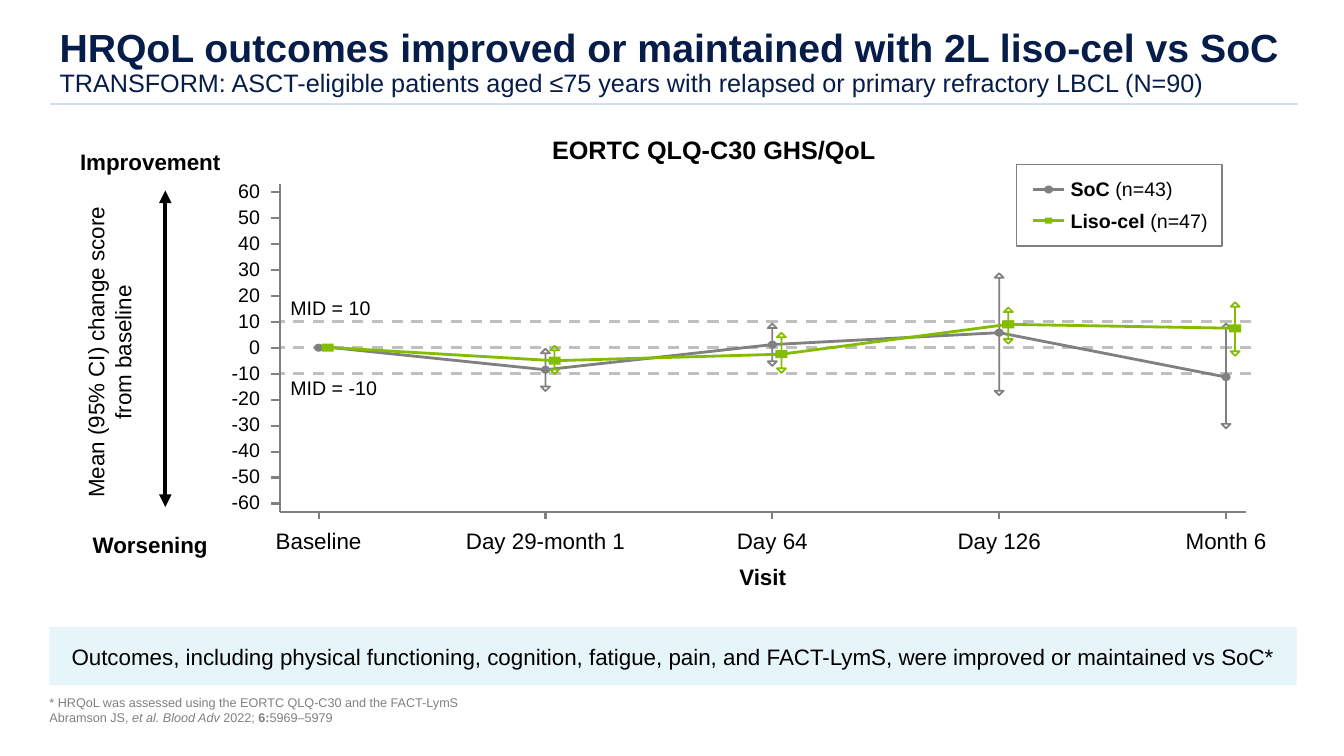
from lxml.etree import SubElement
from pptx import Presentation
from pptx.dml.color import RGBColor
from pptx.enum.dml import MSO_LINE
from pptx.enum.shapes import MSO_CONNECTOR, MSO_SHAPE as Kind
from pptx.enum.text import MSO_ANCHOR as Anchor, MSO_AUTO_SIZE as Fit, PP_ALIGN as Align
from pptx.oxml.ns import qn
from pptx.util import Inches, Pt

NAVY, BLACK, WHITE = "071D49", "000000", "FFFFFF"
GRAY, GREEN, PALE = "808080", "84BD00", "BFBFBF"
LEFT, WIDE = 0.49, 12.37

AXIS_X, AXIS_Y, ZERO, UNIT = 2.78, 5.08, 3.45, 0.2575 / 10
DAY_X, DAY_GAP, TRACE_X = 3.16, 2.25, 3.3
DAYS = ["Baseline", "Day 29-month 1", "Day 64", "Day 126", "Month 6"]

# Mean, upper and lower limit at each visit
SOC = [(0, 0, 0), (-8.5, -0.4, -16.7), (1.2, 9.3, -7), (5.8, 28.7, -18.3), (-11.3, 9.3, -31.1)]
LISO = [(0, 0, 0), (-5, 0.8, -10.1), (-2.5, 5.8, -9.7), (9, 15.5, 1.6), (7.5, 17.5, -3.1)]


def paint(form, color):
    """Set a font colour, or a solid fill from a hex string."""
    if hasattr(form, "solid"):
        form.solid()
        form.fore_color.rgb = RGBColor.from_string(color)
    else:
        form.color.rgb = RGBColor.from_string(color)


def score_y(score):
    return ZERO - score * UNIT


def day_x(index):
    return DAY_X + index * DAY_GAP


class Page:
    """Holds the slide and its text style."""

    def __init__(self, slide, face="Arial"):
        self.slide, self.face = slide, face
        self.shapes = slide.shapes

    def style(self, font, size, color, bold=False):
        font.name, font.size, font.bold = self.face, Pt(size), bold
        paint(font, color)

    def title(self, head, sub):
        box = self.shapes.title
        box.left, box.top = Inches(LEFT), Inches(0.32)
        box.width, box.height = Inches(WIDE), Inches(0.7)
        frame = box.text_frame
        frame.auto_size, frame.vertical_anchor = Fit.NONE, Anchor.BOTTOM
        para = frame.paragraphs[0]
        para.alignment, para.line_spacing = Align.LEFT, 0.9
        self.style(para.font, 28, NAVY, True)
        para.add_run().text = head
        para.add_line_break()
        run = para.add_run()
        run.text = sub
        run.font.size, run.font.bold = Pt(18), False

    def put_text(self, shape, paras, size, color=BLACK, bold=False, align=Align.LEFT,
                 anchor=Anchor.MIDDLE, inset=(0, 0), after=0, wrap=True):
        """Fill a shape; a paragraph is a string or a list of (text, marks)."""
        frame = shape.text_frame
        frame.word_wrap, frame.vertical_anchor = wrap, anchor
        frame.margin_left = frame.margin_right = Inches(inset[0])
        frame.margin_top = frame.margin_bottom = Inches(inset[1])
        for i, parts in enumerate(paras):
            para = frame.add_paragraph() if i else frame.paragraphs[0]
            para.alignment, para.space_after = align, Pt(after)
            self.style(para.font, size, color, bold)
            if isinstance(parts, str):
                parts = [(parts, "")]
            for text, marks in parts:
                run = para.add_run()
                run.text = text
                if "b" in marks:
                    run.font.bold = True
                if "i" in marks:
                    run.font.italic = True

    def label(self, x, y, w, h, *paras, size=16, turn=0, **look):
        box = self.shapes.add_textbox(Inches(x), Inches(y), Inches(w), Inches(h))
        box.rotation = turn
        self.put_text(box, paras, size, **look)

    def shape(self, kind, x, y, w, h, fill=None, line=None, width=1):
        form = self.shapes.add_shape(kind, Inches(x), Inches(y), Inches(w), Inches(h))
        form.shadow.inherit = False
        self.finish(form, fill, line, width)
        return form

    def finish(self, form, fill, line, width):
        if fill:
            paint(form.fill, fill)
        else:
            form.fill.background()
        if line:
            paint(form.line.fill, line)
            form.line.width = Pt(width)
        else:
            form.line.fill.background()

    def dot(self, kind, x, y, w, h, fill):
        """Place a marker by its centre."""
        self.shape(kind, x - w / 2, y - h / 2, w, h, fill)

    def line(self, x1, y1, x2, y2, color, width, dash=False, heads=False):
        link = self.shapes.add_connector(
            MSO_CONNECTOR.STRAIGHT, Inches(x1), Inches(y1), Inches(x2), Inches(y2))
        paint(link.line.fill, color)
        link.line.width = Pt(width)
        if dash:
            link.line.dash_style = MSO_LINE.DASH
        props = link._element.spPr
        if heads:
            for end in ("a:headEnd", "a:tailEnd"):
                SubElement(props.find(qn("a:ln")), qn(end), type="triangle")
        SubElement(props, qn("a:effectLst"))

    def trace(self, points, color):
        spots = [(Inches(x), Inches(y)) for x, y in points]
        build = self.shapes.build_freeform(*spots[0])
        build.add_line_segments(spots[1:], close=False)
        form = build.convert_to_shape()
        form.shadow.inherit = False
        self.finish(form, None, color, 2)

    def series(self, data, color, kind, width, shift):
        spots = [(day_x(i) + shift, score_y(row[0])) for i, row in enumerate(data)]
        for (x, y), (mean, high, low) in zip(spots, data):
            if high > low:
                bar = self.shape(Kind.UP_DOWN_ARROW, x - 0.045, score_y(high), 0.09,
                                 (high - low) * UNIT, None, color, 1.25)
                bar.adjustments[0] = bar.adjustments[1] = 0
            self.dot(kind, x, y, width, 0.08, color)
        self.trace([(TRACE_X, ZERO)] + spots[1:], color)

    def axes(self):
        for score in (10, 0, -10):
            self.line(12.41, score_y(score), AXIS_X, score_y(score), PALE, 2, dash=True)
        self.line(AXIS_X, AXIS_Y, AXIS_X, 1.83, GRAY, 1.5)
        self.line(AXIS_X, AXIS_Y, 12.36, AXIS_Y, GRAY, 1.5)
        for score in range(-60, 61, 10):
            y = score_y(score)
            self.line(AXIS_X, y, 2.69, y, GRAY, 1.5)
            self.label(1.98, y - 0.18, 0.6, 0.33, str(score), size=14, align=Align.RIGHT)
        for i, day in enumerate(DAYS):
            x = day_x(i)
            self.line(x, AXIS_Y, x, AXIS_Y + 0.07, GRAY, 1.5)
            self.label(x - 1.02, 5.25, 2.04, 0.23, day, align=Align.CENTER)
        self.label(2.88, 2.89, 0.93, 0.33, "MID = 10", size=14)
        self.label(2.88, 3.68, 0.93, 0.33, "MID = -10", size=14)

    def legend(self):
        self.shape(Kind.RECTANGLE, 10.08, 1.63, 2.04, 0.81, WHITE, GRAY)
        self.label(10.52, 1.71, 2.24, 0.66, [("SoC ", "b"), ("(n=43)", "")],
                   [("Liso-cel ", "b"), ("(n=47)", "")], size=14,
                   anchor=Anchor.TOP, inset=(0.1, 0.05), after=6)
        for y, color, kind, w, h in ((1.88, GRAY, Kind.OVAL, 0.09, 0.08),
                                     (2.19, GREEN, Kind.RECTANGLE, 0.07, 0.06)):
            self.line(10.25, y, 10.55, y, color, 1.75)
            self.dot(kind, 10.4, y, w, h, color)


def main():
    deck = Presentation()
    deck.slide_width, deck.slide_height = Inches(13.33), Inches(7.5)
    page = Page(deck.slides.add_slide(deck.slide_layouts[5]))
    mid = Align.CENTER

    page.line(0.5, 1.03, 12.87, 1.03, "D4DDF1", 1.1)
    page.title("HRQoL outcomes improved or maintained with 2L liso-cel vs SoC",
               "TRANSFORM: ASCT-eligible patients aged ≤75 years with relapsed "
               "or primary refractory LBCL (N=90)")

    page.label(1.55, 1.35, 11.06, 0.27, "EORTC QLQ-C30 GHS/QoL", size=18, bold=True, align=mid)
    page.label(-0.5, 3.37, 3.16, 0.25, "Mean (95% CI) change score from baseline",
               turn=270, align=mid)
    page.label(0.47, 1.49, 2.04, 0.23, "Improvement", bold=True, align=mid)
    page.label(0.47, 5.29, 2.04, 0.23, "Worsening", bold=True, align=mid)
    page.line(1.64, 1.89, 1.64, 5.03, BLACK, 3, heads=True)
    page.label(AXIS_X, 5.61, 9.57, 0.23, "Visit", bold=True, align=mid)
    page.axes()
    page.legend()
    page.series(SOC, GRAY, Kind.OVAL, 0.09, 0)
    page.series(LISO, GREEN, Kind.RECTANGLE, 0.12, 0.09)

    band = page.shape(Kind.RECTANGLE, LEFT, 6.22, WIDE, 0.58, "E6F5FA")
    page.put_text(band, ["Outcomes, including physical functioning, cognition, fatigue, pain, "
                         "and FACT-LymS, were improved or maintained vs SoC*"], 16, align=mid)
    page.label(LEFT, 6.89, 4.12, 0.3,
               "* HRQoL was assessed using the EORTC QLQ-C30 and the FACT-LymS",
               [("Abramson JS, ", ""), ("et al. Blood Adv ", "i"), ("2022; ", ""),
                ("6:", "b"), ("5969–5979", "")],
               size=9, color=GRAY, anchor=Anchor.BOTTOM, wrap=False)
    deck.save("out.pptx")


if __name__ == "__main__":
    main()
